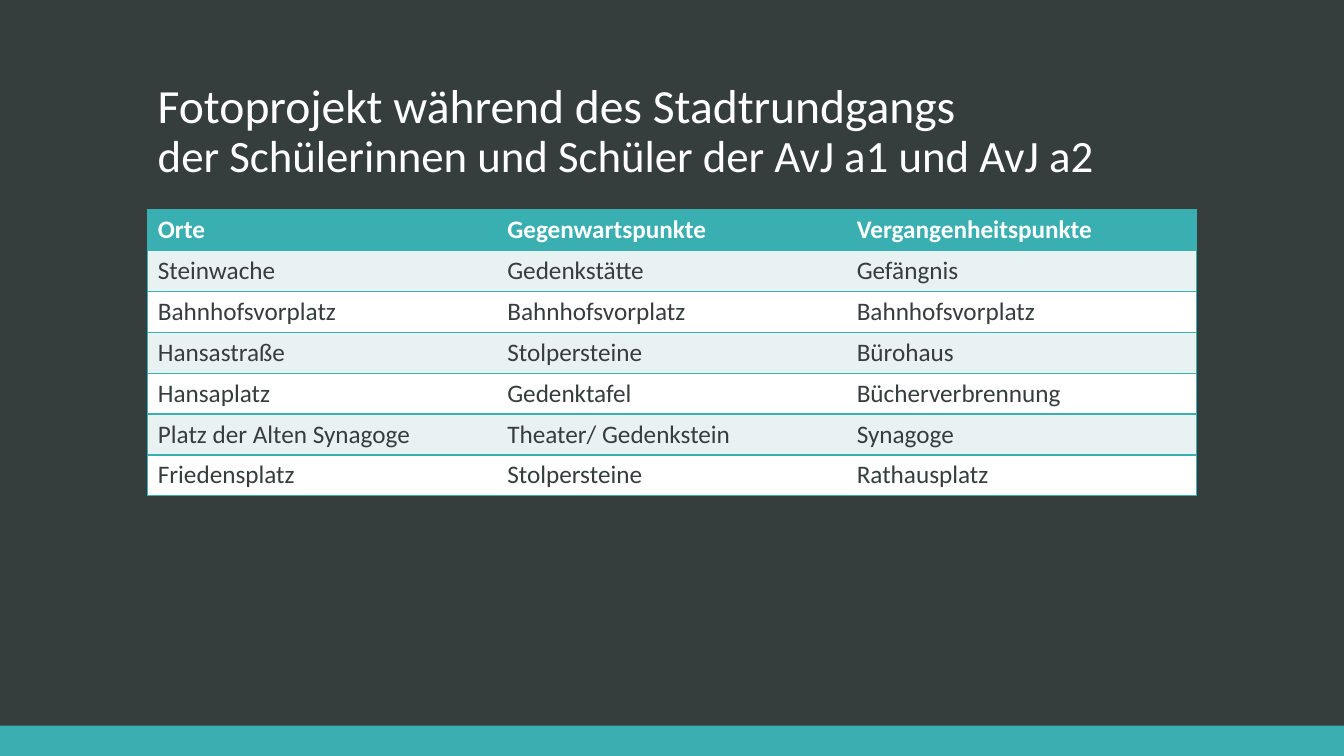
import pptx
import pptx.dml.color
import pptx.enum.shapes
import pptx.enum.text
import pptx.oxml.ns
import pptx.util
from lxml import etree

COLORS = {
    "background": "363D3D",
    "accent": "3AAFB2",
    "band": "E8F2F2",
    "white": "FFFFFF",
}
FONT = "Calibri"
BORDER_PT = 1

TITLE = [
    ("Fotoprojekt während des Stadtrundgangs", 34),
    ("der Schülerinnen und Schüler der AvJ a1 und AvJ a2", 32),
]
ROWS = [
    ("Orte", "Gegenwartspunkte", "Vergangenheitspunkte"),
    ("Steinwache", "Gedenkstätte", "Gefängnis"),
    ("Bahnhofsvorplatz", "Bahnhofsvorplatz", "Bahnhofsvorplatz"),
    ("Hansastraße", "Stolpersteine", "Bürohaus"),
    ("Hansaplatz", "Gedenktafel", "Bücherverbrennung"),
    ("Platz der Alten Synagoge", "Theater/ Gedenkstein", "Synagoge"),
    ("Friedensplatz", "Stolpersteine", "Rathausplatz"),
]


def add_run(p, text, size, color, bold=False):
    r = p.add_run()
    r.text = text
    r.font.name = FONT
    r.font.size = pptx.util.Pt(size)
    r.font.bold = bold
    r.font.color.rgb = pptx.dml.color.RGBColor.from_string(COLORS[color])


def set_borders(cell, visible):
    """Draw the accent line on the visible sides (of L, R, T, B) and none on the others."""
    tc_pr = cell._tc.get_or_add_tcPr()
    for side in "LRTB":
        ln = etree.SubElement(tc_pr, pptx.oxml.ns.qn(f"a:ln{side}"))
        if side in visible:
            ln.set("w", str(pptx.util.Pt(BORDER_PT)))
            fill = etree.SubElement(ln, pptx.oxml.ns.qn("a:solidFill"))
            etree.SubElement(fill, pptx.oxml.ns.qn("a:srgbClr"), val=COLORS["accent"])
        else:
            etree.SubElement(ln, pptx.oxml.ns.qn("a:noFill"))


prs = pptx.Presentation()
prs.slide_width = pptx.util.Inches(13.33)
prs.slide_height = pptx.util.Inches(7.5)
W, H = prs.slide_width, prs.slide_height
left, width = int(W * 0.11), int(W * 0.78)

s = prs.slides.add_slide(prs.slide_layouts[6])
s.background.fill.solid()
s.background.fill.fore_color.rgb = pptx.dml.color.RGBColor.from_string(COLORS["background"])

# Footer band
band_h = int(H * 0.04)
sp = s.shapes.add_shape(pptx.enum.shapes.MSO_SHAPE.RECTANGLE, 0, H - band_h, W, band_h)
sp.shadow.inherit = False
sp.fill.solid()
sp.fill.fore_color.rgb = pptx.dml.color.RGBColor.from_string(COLORS["accent"])
sp.line.fill.background()

# Title
sp = s.shapes.add_textbox(left, int(H * 0.068), width, int(H * 0.18))
tf = sp.text_frame
tf.word_wrap = True
tf.vertical_anchor = pptx.enum.text.MSO_ANCHOR.BOTTOM
p = tf.paragraphs[0]
p.line_spacing = 0.9
for i, (line, size) in enumerate(TITLE):
    if i:
        p.add_line_break()
    add_run(p, line, size, "white")

# Table of places
n_rows, n_cols = len(ROWS), len(ROWS[0])
table = s.shapes.add_table(
    n_rows, n_cols, left, pptx.util.Inches(2.08), width, pptx.util.Inches(2.84)
).table
for i, row in enumerate(ROWS):
    header = i == 0
    fill = "accent" if header else "band" if i % 2 else "white"
    for j, text in enumerate(row):
        cell = table.cell(i, j)
        sides = "TB" + ("L" if j == 0 else "") + ("R" if j == n_cols - 1 else "")
        set_borders(cell, sides)
        cell.fill.solid()
        cell.fill.fore_color.rgb = pptx.dml.color.RGBColor.from_string(COLORS[fill])
        add_run(cell.text_frame.paragraphs[0], text, 18,
                "white" if header else "background", bold=header)

prs.save("out.pptx")
